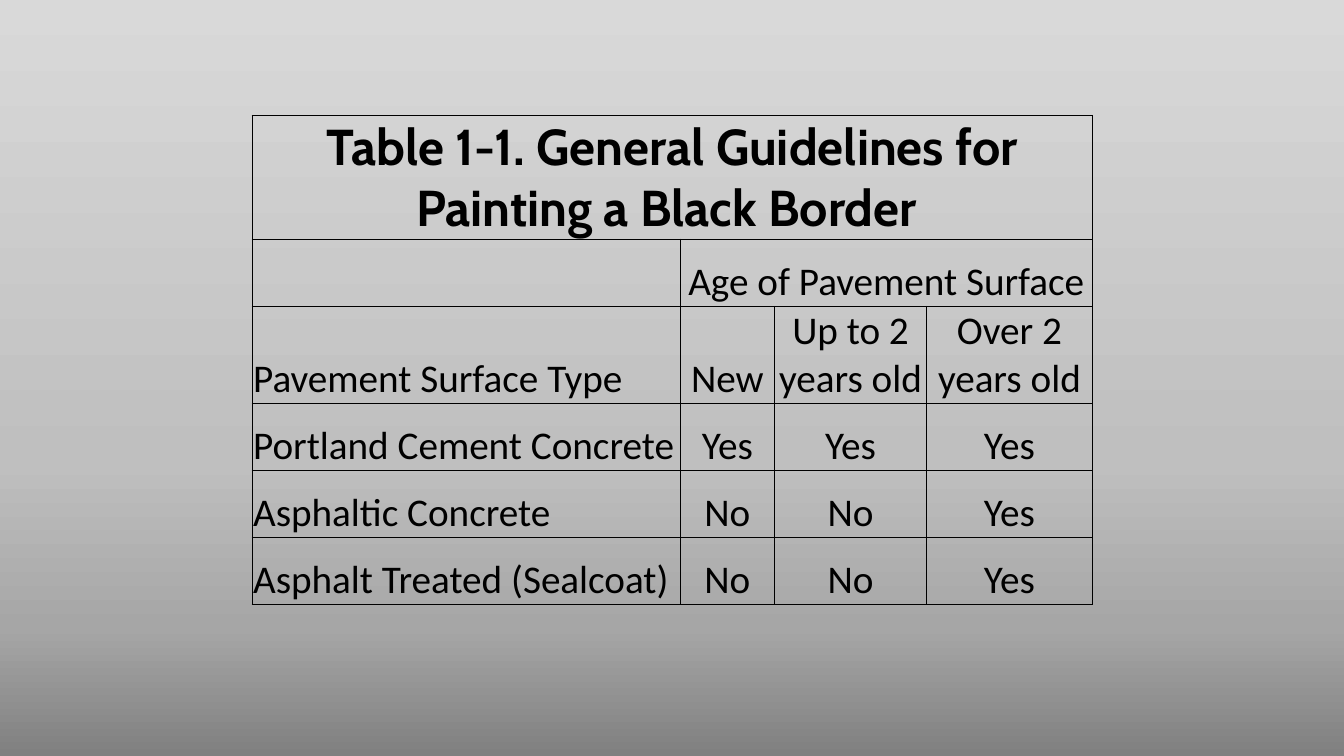
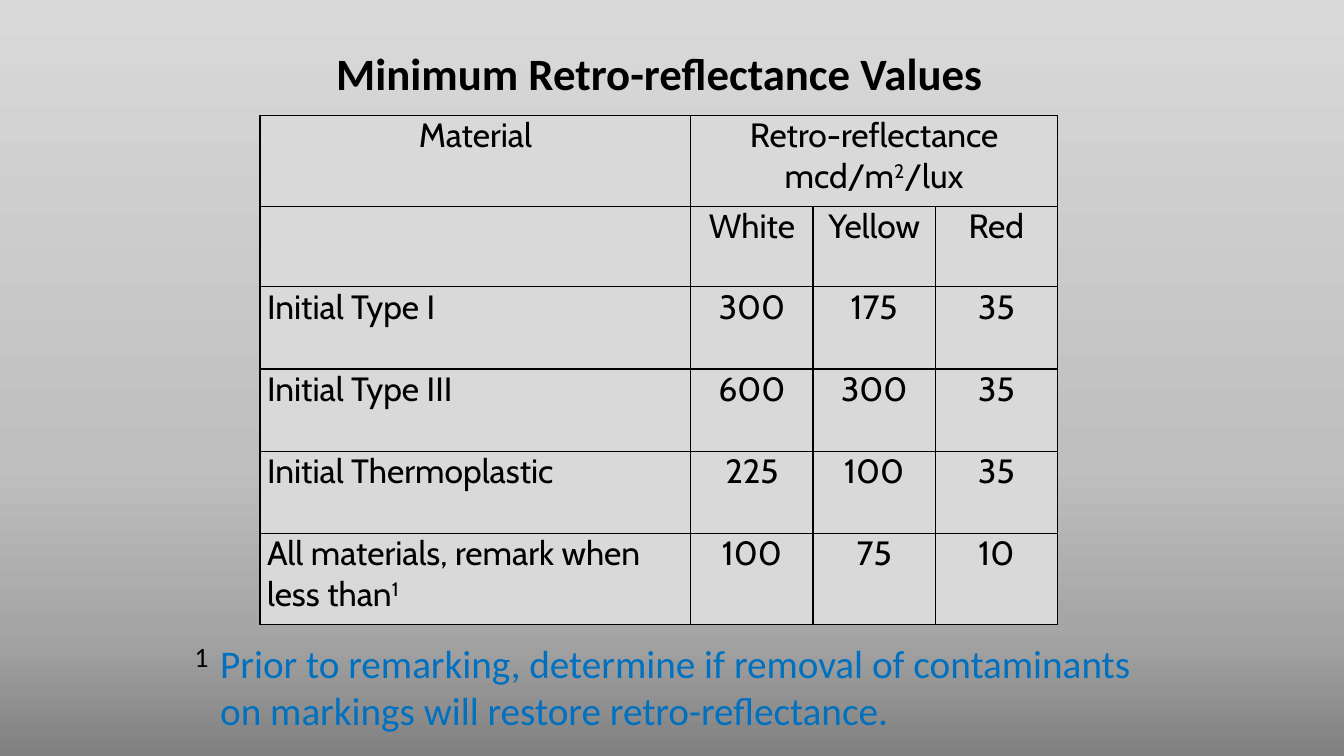
import lxml.etree
import pptx
import pptx.dml.color
import pptx.enum.text
import pptx.oxml
import pptx.oxml.ns
import pptx.util

Cm = pptx.util.Cm
Pt = pptx.util.Pt
ALIGN = pptx.enum.text.PP_ALIGN
ANCHOR = pptx.enum.text.MSO_ANCHOR
qn = pptx.oxml.ns.qn

BLACK = "000000"
BLUE = "0070C0"
LIGHT_GRAY = "D9D9D9"
BACKDROP_STOPS = [(0, LIGHT_GRAY), (61, "BFBFBF"), (83, "A6A6A6"), (100, "808080")]

TABLE_TITLE = {"name": "Cabin", "size": Pt(36), "bold": True}
GUIDELINE = {"name": "Calibri", "size": Pt(28), "bold": False}
REFLECTANCE = {"name": "Cabin", "size": Pt(24), "bold": False}
SLIDE_TITLE = {"name": "Calibri", "size": Pt(32), "bold": True}
FOOTNOTE = {"name": "Calibri", "size": Pt(28), "bold": False}
FOOTNOTE_MARK = {"name": "Calibri", "size": Pt(20), "bold": False}

GUIDELINE_MARGINS = {
    "margin_left": Cm(0.03), "margin_top": Cm(0.03),
    "margin_right": Cm(0.03), "margin_bottom": Cm(0),
}
REFLECTANCE_MARGINS = {
    "margin_left": Cm(0.18), "margin_top": Cm(0),
    "margin_right": Cm(0.18), "margin_bottom": Cm(0),
}

GUIDELINE_ROWS = [
    ["Table 1-1. General Guidelines for Painting a Black Border ", "", "", ""],
    ["", "Age of Pavement Surface", "", ""],
    ["Pavement Surface Type", "New", "Up to 2 years old", "Over 2 years old"],
    ["Portland Cement Concrete", "Yes", "Yes", "Yes"],
    ["Asphaltic Concrete", "No", "No", "Yes"],
    ["Asphalt Treated (Sealcoat)", "No", "No", "Yes"],
]
REFLECTANCE_ROWS = [
    ["Material", "Retro-reflectance mcd/m^2^/lux", "", ""],
    ["", "White", "Yellow", "Red"],
    ["Initial Type I", "300", "175", "35"],
    ["Initial Type III", "600", "300", "35"],
    ["Initial Thermoplastic", "225", "100", "35"],
    ["All materials, remark when less than^1^", "100", "75", "10"],
]


def color(hex_value):
    return pptx.dml.color.RGBColor.from_string(hex_value)


def apply_format(target, values):
    for name, value in values.items():
        setattr(target, name, value)


def set_backdrop(master):
    fill = master.background.fill
    fill.gradient()
    fill.gradient_angle = 270
    stop_list = next(master.element.iter(qn("a:gsLst")))
    for stop in list(stop_list):
        stop_list.remove(stop)
    for position, hex_value in BACKDROP_STOPS:
        stop = lxml.etree.SubElement(stop_list, qn("a:gs"), pos=str(position * 1000))
        lxml.etree.SubElement(stop, qn("a:srgbClr"), val=hex_value)


def write_text(text_frame, text, font_format, alignment, hex_value=BLACK):
    paragraph = text_frame.paragraphs[0]
    paragraph.alignment = alignment
    for index, part in enumerate(text.split("^")):
        if not part:
            continue
        run = paragraph.add_run()
        run.text = part
        apply_format(run.font, font_format)
        run.font.color.rgb = color(hex_value)
        if index % 2:
            run._r.get_or_add_rPr().set("baseline", "30000")


def add_text(slide, box, text, font_format, alignment, hex_value=BLACK, wrap=True):
    shape = slide.shapes.add_textbox(*map(Cm, box))
    shape.text_frame.word_wrap = wrap
    write_text(shape.text_frame, text, font_format, alignment, hex_value)


def add_borders(cell, width):
    properties = cell._tc.get_or_add_tcPr()
    for side in ("lnL", "lnR", "lnT", "lnB"):
        line = lxml.etree.SubElement(properties, qn(f"a:{side}"), w=str(Pt(width)))
        solid = lxml.etree.SubElement(line, qn("a:solidFill"))
        lxml.etree.SubElement(solid, qn("a:srgbClr"), val=BLACK)


def add_table(slide, position, widths, heights, rows, body, header, margins,
              anchors, border_width, merges, fill_color=None):
    left, top = position
    table = slide.shapes.add_table(
        len(rows), len(widths), Cm(left), Cm(top), Cm(sum(widths)), Cm(sum(heights))
    ).table
    apply_format(table, {"first_row": False, "horz_banding": False})
    for column, width in zip(table.columns, widths):
        column.width = Cm(width)
    for row, height in zip(table.rows, heights):
        row.height = Cm(height)
    for row_index, row in enumerate(rows):
        is_header = row_index == 0
        for column_index, text in enumerate(row):
            cell = table.cell(row_index, column_index)
            apply_format(cell, margins)
            cell.vertical_anchor = anchors[0 if is_header else 1]
            add_borders(cell, border_width)
            if fill_color:
                cell.fill.solid()
                cell.fill.fore_color.rgb = color(fill_color)
            else:
                cell.fill.background()
            centered = is_header or column_index > 0
            write_text(cell.text_frame, text, header if is_header else body,
                       ALIGN.CENTER if centered else ALIGN.LEFT)
    for row_index, first, last in merges:
        table.cell(row_index, first).merge(table.cell(row_index, last))


def build_guidelines(slide):
    add_table(
        slide, (6.35, 2.9), [10.79, 2.38, 3.83, 4.18],
        [3.12, 1.69, 2.44] + [1.69] * 3, GUIDELINE_ROWS, GUIDELINE, TABLE_TITLE,
        GUIDELINE_MARGINS, (ANCHOR.MIDDLE, ANCHOR.BOTTOM), 0.5,
        [(0, 0, 3), (1, 1, 3)],
    )


def build_reflectance(slide):
    add_table(
        slide, (6.55, 2.91), [10.86] + [3.08] * 3,
        [2.29, 2.03] + [2.07] * 3 + [2.29], REFLECTANCE_ROWS, REFLECTANCE, REFLECTANCE,
        REFLECTANCE_MARGINS, (ANCHOR.TOP, ANCHOR.TOP), 1,
        [(0, 1, 3)], LIGHT_GRAY,
    )
    add_text(
        slide, (5.3, 15.98, 23.88, 2.65),
        "Prior to remarking, determine if removal of contaminants on markings "
        "will restore retro-reflectance.",
        FOOTNOTE, ALIGN.LEFT, BLUE,
    )
    add_text(slide, (8.15, 1.02, 16.94, 1.62), "Minimum Retro-reflectance Values",
             SLIDE_TITLE, ALIGN.CENTER, wrap=False)
    add_text(slide, (4.65, 15.98, 0.66, 1.11), "1", FOOTNOTE_MARK, ALIGN.CENTER)


def main():
    presentation = pptx.Presentation()
    apply_format(presentation, {"slide_width": Cm(33.87), "slide_height": Cm(19.05)})
    set_backdrop(presentation.slide_master)
    blank_layout = presentation.slide_layouts[6]
    for build in (build_guidelines, build_reflectance):
        build(presentation.slides.add_slide(blank_layout))
    presentation.save("out.pptx")


if __name__ == "__main__":
    main()
